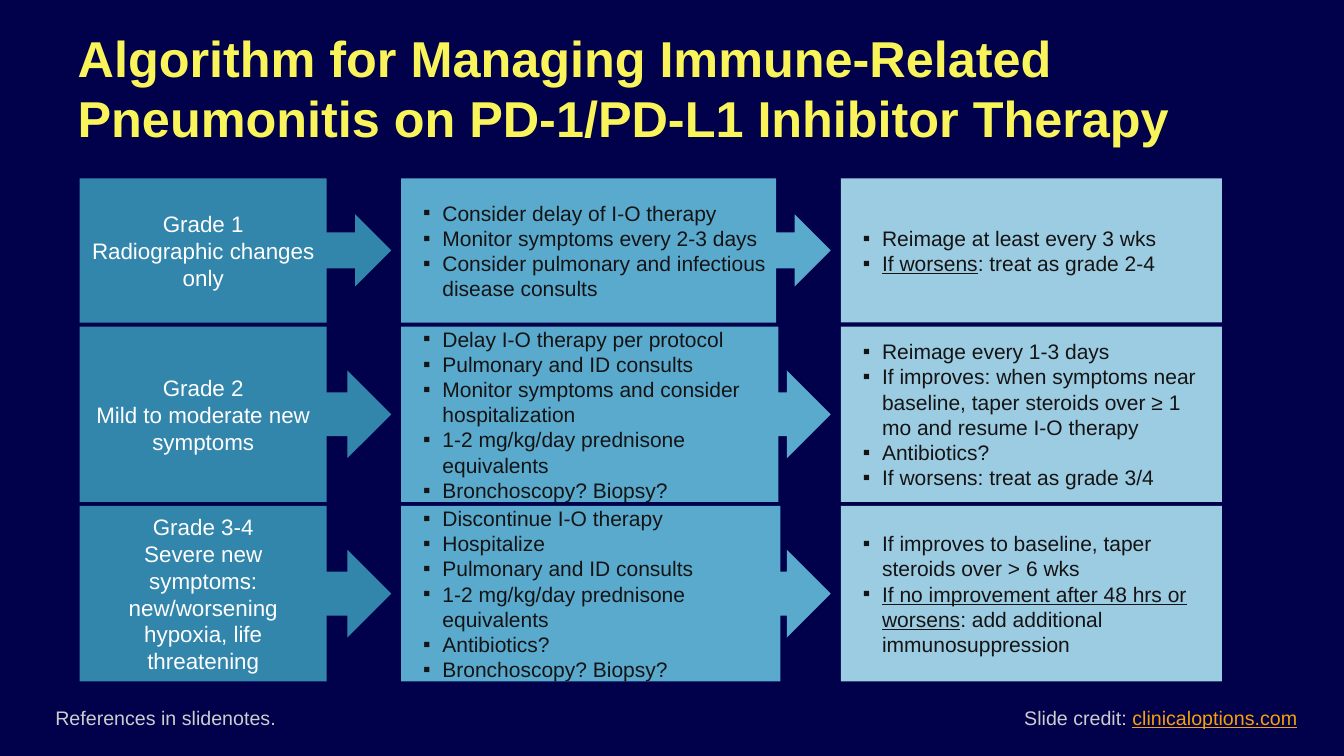
from pptx import Presentation
from pptx.dml.color import RGBColor
from pptx.enum.shapes import MSO_SHAPE
from pptx.enum.text import MSO_ANCHOR, PP_ALIGN
from pptx.oxml.ns import qn
from pptx.util import Inches, Pt
from lxml.etree import SubElement

NAVY = RGBColor(0x00, 0x00, 0x4B)
YELLOW = RGBColor(0xF8, 0xF4, 0x5A)
TEAL = RGBColor(0x33, 0x86, 0xAB)
BLUE = RGBColor(0x5A, 0xAA, 0xCE)
PALE = RGBColor(0x9C, 0xCC, 0xE2)
WHITE = RGBColor(0xFF, 0xFF, 0xFF)
INK = RGBColor(0x14, 0x14, 0x15)
GRAY = RGBColor(0xCD, 0xCD, 0xCF)
ORANGE = RGBColor(0xF6, 0xA1, 0x08)

# Grid tracks as (start, size) in inches
COLUMNS = [(0.79, 3.09), (3.98, 4.26), (8.34, 3.78)]
ROWS = [(1.77, 1.43), (3.24, 1.74), (5.02, 1.74)]

# Each row: grade, management with its box share, follow-up.
# A bullet is a string, or an (underlined, plain) pair.
GRADES = [
    (["Grade 1", "Radiographic changes only"],
     0.873,
     ["Consider delay of I-O therapy", "Monitor symptoms every 2-3 days",
      "Consider pulmonary and infectious disease consults"],
     ["Reimage at least every 3 wks", ("If worsens", ": treat as grade 2-4")]),
    (["Grade 2", "Mild to moderate new symptoms"],
     0.878,
     ["Delay I-O therapy per protocol", "Pulmonary and ID consults",
      "Monitor symptoms and consider hospitalization",
      "1-2 mg/kg/day prednisone equivalents", "Bronchoscopy? Biopsy?"],
     ["Reimage every 1-3 days",
      "If improves: when symptoms near baseline, taper steroids over ≥ 1 mo "
      "and resume I-O therapy",
      "Antibiotics?", "If worsens: treat as grade 3/4"]),
    (["Grade 3-4", "Severe new symptoms: new/worsening hypoxia, life threatening"],
     0.883,
     ["Discontinue I-O therapy", "Hospitalize", "Pulmonary and ID consults",
      "1-2 mg/kg/day prednisone equivalents", "Antibiotics?",
      "Bronchoscopy? Biopsy?"],
     ["If improves to baseline, taper steroids over > 6 wks",
      ("If no improvement after 48 hrs or worsens",
       ": add additional immunosuppression")]),
]


class Deck:
    font = "Arial"

    def __init__(self, width, height):
        self.prs = Presentation()
        self.prs.slide_width, self.prs.slide_height = Inches(width), Inches(height)
        self.slide = self.prs.slides.add_slide(self.prs.slide_layouts[5])
        fill = self.slide.background.fill
        fill.solid()
        fill.fore_color.rgb = NAVY

    def run(self, p, text, size, color, bold=False, underline=False):
        r = p.add_run()
        r.text = text
        font = r.font
        font.name, font.size, font.bold = self.font, Pt(size), bold
        font.underline = underline
        font.color.rgb = color

    def title(self, text, left, top, width, height):
        sp = self.slide.shapes.title
        sp.left, sp.top = Inches(left), Inches(top)
        sp.width, sp.height = Inches(width), Inches(height)
        tf = sp.text_frame
        tf.word_wrap, tf.vertical_anchor = True, MSO_ANCHOR.MIDDLE
        p = tf.paragraphs[0]
        p.alignment = PP_ALIGN.LEFT
        self.run(p, text, 36, YELLOW, bold=True)

    def cell(self, column, row, color, box_share=None):
        """Fill a grid cell; with box_share, the rest of its width is an arrow."""
        (left, width), (top, height) = COLUMNS[column], ROWS[row]
        kind = MSO_SHAPE.RIGHT_ARROW_CALLOUT if box_share else MSO_SHAPE.RECTANGLE
        sp = self.slide.shapes.add_shape(
            kind, Inches(left), Inches(top), Inches(width), Inches(height))
        if box_share:
            sp.adjustments[3] = box_share
        sp.shadow.inherit = False
        sp.fill.solid()
        sp.fill.fore_color.rgb = color
        sp.line.fill.background()
        tf = sp.text_frame
        tf.word_wrap, tf.vertical_anchor = True, MSO_ANCHOR.MIDDLE
        return tf

    def paragraphs(self, tf, count):
        return [tf.paragraphs[0]] + [tf.add_paragraph() for _ in range(count - 1)]

    def grade(self, row, lines):
        tf = self.cell(0, row, TEAL, 0.793)
        for p, line in zip(self.paragraphs(tf, len(lines)), lines):
            p.alignment = PP_ALIGN.CENTER
            self.run(p, line, 16, WHITE)

    def bullets(self, column, row, color, items, box_share=None):
        tf = self.cell(column, row, color, box_share)
        for p, item in zip(self.paragraphs(tf, len(items)), items):
            p.alignment = PP_ALIGN.LEFT
            pPr = p._p.get_or_add_pPr()
            pPr.set("marL", str(Inches(0.31)))
            pPr.set("indent", str(Inches(-0.19)))
            SubElement(pPr, qn("a:buFont"), typeface=self.font)
            SubElement(pPr, qn("a:buChar"), char="▪")
            marked, plain = item if isinstance(item, tuple) else ("", item)
            if marked:
                self.run(p, marked, 15, INK, underline=True)
            self.run(p, plain, 15, INK)

    def note(self, left, width, wrap=True):
        """Add a footer text box and return its paragraph."""
        tf = self.slide.shapes.add_textbox(
            Inches(left), Inches(6.95), Inches(width), Inches(0.34)).text_frame
        tf.word_wrap = wrap
        return tf.paragraphs[0]


def main():
    deck = Deck(13.33, 7.5)
    deck.title("Algorithm for Managing Immune-Related Pneumonitis on "
               "PD-1/PD-L1 Inhibitor Therapy", 0.67, 0.26, 12.18, 1.21)
    for row, (grade, share, management, follow_up) in enumerate(GRADES):
        deck.grade(row, grade)
        deck.bullets(1, row, BLUE, management, share)
        deck.bullets(2, row, PALE, follow_up)
    deck.run(deck.note(0.45, 8.59), "References in slidenotes.", 14, GRAY)
    credit = deck.note(10.06, 2.92, wrap=False)
    deck.run(credit, "Slide credit: ", 14, GRAY)
    deck.run(credit, "clinicaloptions.com", 14, ORANGE, underline=True)
    deck.prs.save("out.pptx")


if __name__ == "__main__":
    main()
